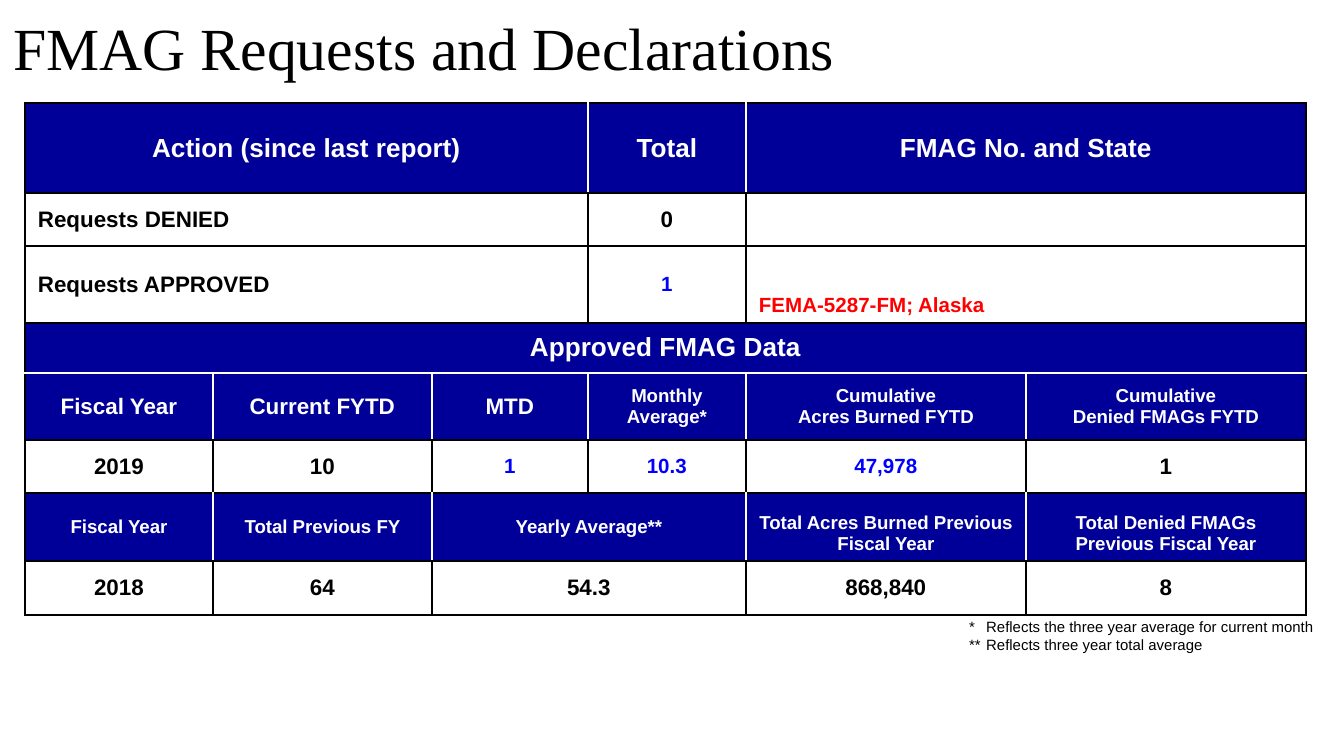
from lxml import etree
from pptx import Presentation
from pptx.dml.color import RGBColor
from pptx.enum.text import MSO_ANCHOR, MSO_AUTO_SIZE, PP_ALIGN
from pptx.oxml.ns import qn
from pptx.util import Pt

LEFT, CENTER, JUSTIFY = PP_ALIGN.LEFT, PP_ALIGN.CENTER, PP_ALIGN.JUSTIFY
MIDDLE, BOTTOM = MSO_ANCHOR.MIDDLE, MSO_ANCHOR.BOTTOM
GROW = MSO_AUTO_SIZE.SHAPE_TO_FIT_TEXT

PX = 914400 / 134.4  # EMU in one pixel
COLORS = {"navy": "000099", "white": "FFFFFF", "black": "000000",
          "blue": "0000FF", "red": "FF0000"}


def px(*lengths):
    return [round(length * PX) for length in lengths]


def write(frame, text, size, color, align=LEFT, font="Arial", bold=False, tab=None):
    for i, line in enumerate(text.split("\n")):
        paragraph = frame.paragraphs[0] if i == 0 else frame.add_paragraph()
        paragraph.alignment = align
        if tab:
            stops = etree.SubElement(paragraph._p.get_or_add_pPr(), qn("a:tabLst"))
            etree.SubElement(stops, qn("a:tab"), pos=str(px(tab)[0]), algn="l")
        run = paragraph.add_run()
        run.text = line
        for key, value in {"size": Pt(size), "name": font, "bold": bold}.items():
            setattr(run.font, key, value)
        run.font.color.rgb = RGBColor.from_string(COLORS[color])


prs = Presentation()
prs.slide_width, prs.slide_height = px(1344, 756)
slide = prs.slides.add_slide(prs.slide_layouts[6])

# Title
title = slide.shapes.add_textbox(*px(0, 0, 1344, 94)).text_frame
title_format = {"word_wrap": True, "vertical_anchor": MIDDLE,
                "auto_size": GROW, "margin_right": 0}
for key, value in title_format.items():
    setattr(title, key, value)
write(title, "FMAG Requests and Declarations", 32, "black", font="Times New Roman")

# Table rows: (text, columns spanned, size, text colour, settings that differ)
HEAD, TOP, LOW = {"fill": "navy"}, {"align": LEFT}, {"fill": "navy", "anchor": BOTTOM}
APPROVED = {"align": JUSTIFY, "anchor": BOTTOM, "spacing": 1.5}
rows = [
    [("Action (since last report)", 3, 14, "white", HEAD),
     ("Total", 1, 14, "white", HEAD),
     ("FMAG No. and State", 2, 14, "white", HEAD)],
    [("Requests DENIED", 3, 12, "black", TOP),
     ("0", 1, 12, "black", {}),
     ("", 2, 12, "black", {})],
    [("Requests APPROVED", 3, 12, "black", TOP),
     ("1", 1, 11, "blue", {}),
     ("FEMA-5287-FM; Alaska", 2, 11, "red", APPROVED)],
    [("Approved FMAG Data", 6, 14, "white", HEAD)],
    [("Fiscal Year", 1, 12, "white", HEAD),
     ("Current FYTD", 1, 12, "white", HEAD),
     ("MTD", 1, 12, "white", HEAD),
     ("Monthly Average*", 1, 10, "white", HEAD),
     ("Cumulative\nAcres Burned FYTD", 1, 10, "white", HEAD),
     ("Cumulative\nDenied FMAGs FYTD", 1, 10, "white", HEAD)],
    [("2019", 1, 12, "black", {}),
     ("10", 1, 12, "black", {}),
     ("1", 1, 11, "blue", {}),
     ("10.3", 1, 11, "blue", {}),
     ("47,978", 1, 11, "blue", {}),
     ("1", 1, 12, "black", {})],
    [("Fiscal Year", 1, 10, "white", HEAD),
     ("Total Previous FY", 1, 10, "white", HEAD),
     ("Yearly Average**", 2, 10, "white", HEAD),
     ("Total Acres Burned Previous Fiscal Year", 1, 10, "white", LOW),
     ("Total Denied FMAGs Previous Fiscal Year", 1, 10, "white", LOW)],
    [("2018", 1, 12, "black", {}),
     ("64", 1, 12, "black", {}),
     ("54.3", 2, 12, "black", {}),
     ("868,840", 1, 12, "black", {}),
     ("8", 1, 12, "black", {})],
]
col_widths = [188, 219, 156, 158, 280, 280]
row_heights = [90, 53, 77, 50, 67, 53, 68, 54]
last_col = len(col_widths)
banner_row = 3  # a white line parts the banner from the headings below it

table = slide.shapes.add_table(
    len(rows), last_col, *px(25, 103, sum(col_widths), sum(row_heights))).table
for column, width in zip(table.columns, px(*col_widths)):
    column.width = width
for table_row, height in zip(table.rows, px(*row_heights)):
    table_row.height = height

cell_format = {"margin_left": 13, "margin_right": 13, "margin_top": 6, "margin_bottom": 6}
for r, row in enumerate(rows):
    c = 0
    for text, span, size, color, settings in row:
        fill = settings.get("fill", "white")
        end = c + span
        inner = "white" if fill == "navy" else "black"
        borders = {
            "a:lnL": inner if c > 0 else "black",
            "a:lnR": inner if end < last_col else "black",
            "a:lnT": "white" if r == banner_row + 1 else "black",
            "a:lnB": "white" if r == banner_row else "black",
        }
        # Borders come before the fill in the cell properties
        for k in range(c, end):
            cell = table.cell(r, k)
            properties = cell._tc.get_or_add_tcPr()
            for tag, line_color in borders.items():
                line = etree.SubElement(properties, qn(tag), w=str(Pt(1)))
                solid = etree.SubElement(line, qn("a:solidFill"))
                etree.SubElement(solid, qn("a:srgbClr"), val=COLORS[line_color])
            cell.fill.solid()
            cell.fill.fore_color.rgb = RGBColor.from_string(COLORS[fill])

        cell = table.cell(r, c)
        if span > 1:
            cell.merge(table.cell(r, end - 1))
        for key, value in cell_format.items():
            setattr(cell, key, px(value)[0])
        cell.vertical_anchor = settings.get("anchor", MIDDLE)
        if text:
            write(cell.text_frame, text, size, color,
                  settings.get("align", CENTER), bold=True)
            if "spacing" in settings:
                cell.text_frame.paragraphs[0].line_spacing = settings["spacing"]
        c = end

# Footnotes
footnotes = slide.shapes.add_textbox(*px(956, 611, 376, 50)).text_frame
for key, value in {"word_wrap": False, "auto_size": GROW}.items():
    setattr(footnotes, key, value)
write(footnotes,
      "*\tReflects the three year average for current month\n"
      "**\tReflects three year total average", 8, "black", tab=17)

prs.save("out.pptx")
